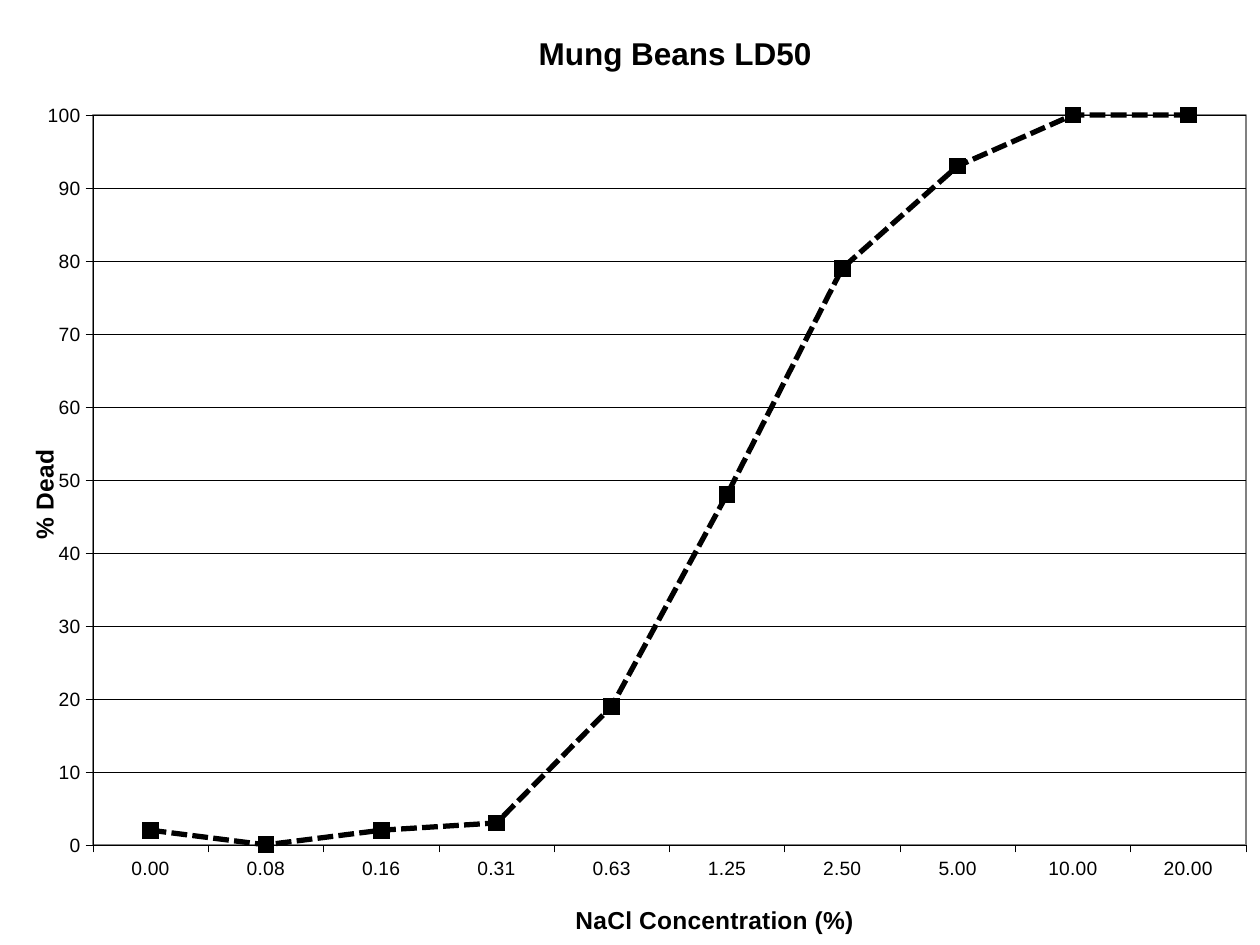
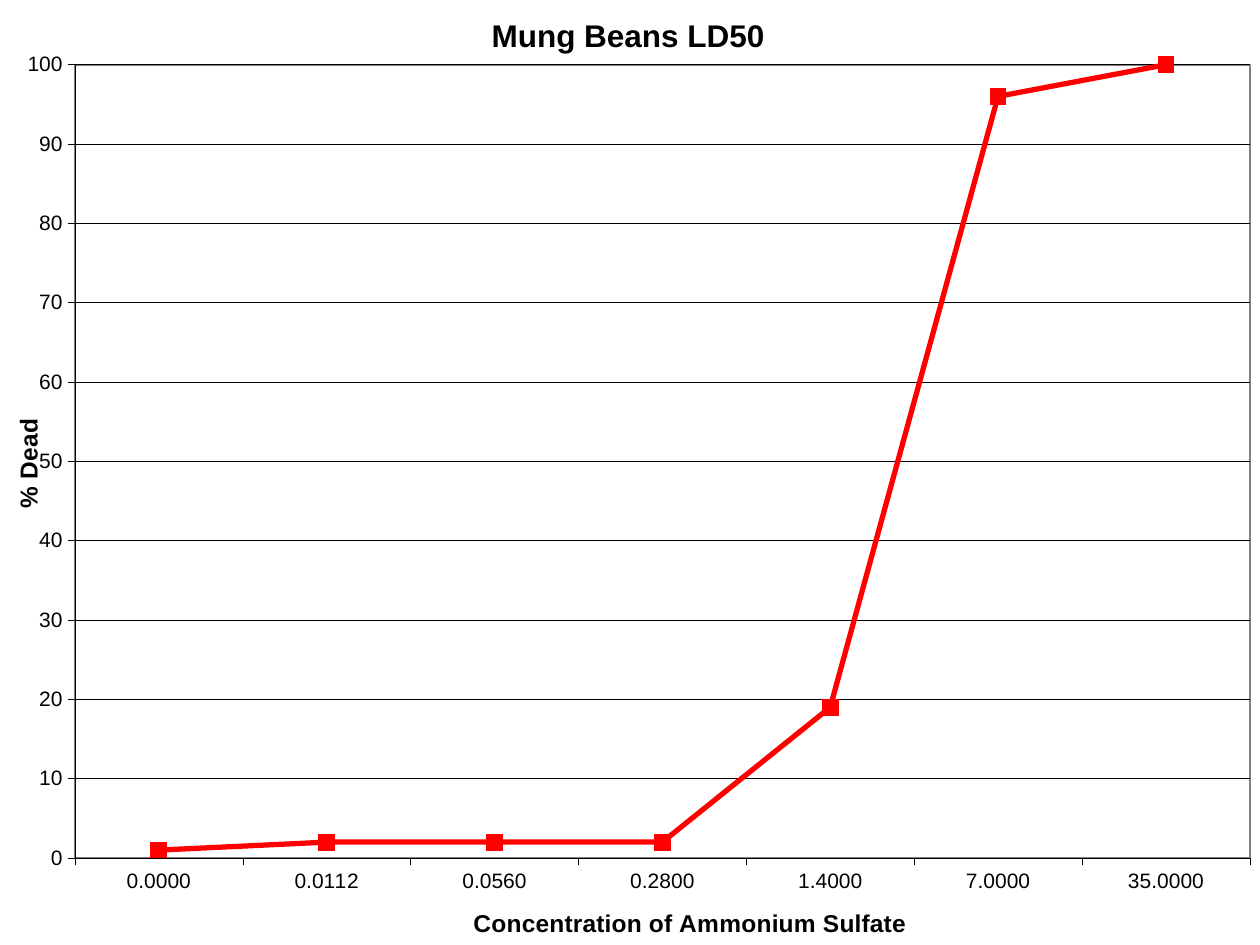
from lxml.etree import SubElement
from pptx import Presentation
from pptx.chart.data import CategoryChartData
from pptx.dml.color import RGBColor
from pptx.enum.chart import XL_CHART_TYPE as ChartType
from pptx.enum.chart import XL_MARKER_STYLE as MarkerStyle
from pptx.enum.chart import XL_TICK_MARK as TickMark
from pptx.enum.dml import MSO_LINE_DASH_STYLE as DashStyle
from pptx.oxml.ns import qn
from pptx.util import Pt

PX = 914400 // 126
WIDTH, HEIGHT = 1260, 945
FONT = "Arial"
COLORS = {"ink": "000000", "frame": "808080", "salt": "000000", "sulfate": "FF0000"}


def color(name):
    return RGBColor.from_string(COLORS[name])


def style_font(font, size, bold=False):
    font.name = FONT
    font.size = Pt(size)
    font.bold = bold
    font.color.rgb = color("ink")


def style_line(line, name, width):
    line.color.rgb = color(name)
    line.width = Pt(width)


def place(holder, index, spot, box):
    for old in holder.findall(qn("c:layout")):
        holder.remove(old)
    layout = holder.makeelement(qn("c:layout"), {})
    holder.insert(index, layout)
    manual = SubElement(layout, qn("c:manualLayout"))
    fields = []
    if len(spot) == 4:
        fields.append(("layoutTarget", "inner"))
    fields += [("xMode", "edge"), ("yMode", "edge")]
    sizes = (box[2], box[3]) * 2
    fields += [(key, f"{value / size:.4f}") for key, value, size in zip("xywh", spot, sizes)]
    for key, value in fields:
        SubElement(manual, qn(f"c:{key}"), val=value)


def add_title(title, text, size, spot, box):
    span = title.text_frame.paragraphs[0].add_run()
    span.text = text
    style_font(span.font, size, bold=True)
    place(title.element, 1, spot, box)


def style_axis(axis, size):
    axis.major_tick_mark = TickMark.OUTSIDE
    axis.minor_tick_mark = TickMark.NONE
    style_font(axis.tick_labels.font, size)
    style_line(axis.format.line, "ink", 0.25)


def style_series(series, name, dash):
    series.smooth = False
    style_line(series.format.line, name, 3)
    if dash:
        series.format.line.dash_style = dash
    marker = series.marker
    marker.style = MarkerStyle.SQUARE
    marker.size = 9
    marker.format.fill.solid()
    marker.format.fill.fore_color.rgb = color(name)
    style_line(marker.format.line, name, 0.75)


def frame_plot(chart, spot, box):
    area = chart.element.find(".//" + qn("c:plotArea"))
    place(area, 0, spot, box)
    shape = SubElement(area, qn("c:spPr"))
    SubElement(shape, qn("a:noFill"))
    line = SubElement(shape, qn("a:ln"), w=str(Pt(1)))
    fill = SubElement(line, qn("a:solidFill"))
    SubElement(fill, qn("a:srgbClr"), val=COLORS["frame"])


def add_dose_chart(page, box, doses, dead, dose_title, label_size, name, spots, dash=None):
    data = CategoryChartData()
    data.categories = doses
    data.add_series("Series 1", dead)
    chart = page.shapes.add_chart(
        ChartType.LINE_MARKERS, *(side * PX for side in box), data
    ).chart
    style_font(chart.font, 10)
    chart.has_legend = False
    chart.has_title = True
    chart.plots[0].vary_by_categories = False
    add_title(chart.chart_title, "Mung Beans LD50", 18, spots["title"], box)

    dose_axis, dead_axis = chart.category_axis, chart.value_axis
    style_axis(dose_axis, label_size)
    style_axis(dead_axis, label_size)
    add_title(dose_axis.axis_title, dose_title, 14, spots["dose"], box)
    add_title(dead_axis.axis_title, "% Dead", 14, spots["dead"], box)
    body = dead_axis.axis_title.element.find(".//" + qn("a:bodyPr"))
    body.set("rot", "-5400000")
    body.set("vert", "horz")

    dead_axis.minimum_scale = 0
    dead_axis.maximum_scale = 100
    dead_axis.major_unit = 10
    dead_axis.tick_labels.number_format = "0"
    dead_axis.tick_labels.number_format_is_linked = False
    dead_axis.has_major_gridlines = True
    style_line(dead_axis.major_gridlines.format.line, "ink", 0.25)
    style_series(chart.plots[0].series[0], name, dash)
    frame_plot(chart, spots["plot"], box)


def main():
    deck = Presentation()
    deck.slide_width, deck.slide_height = WIDTH * PX, HEIGHT * PX
    blank = deck.slide_layouts[6]
    box = (0, 0, WIDTH, HEIGHT)

    add_dose_chart(
        deck.slides.add_slide(blank), box,
        ["0.00", "0.08", "0.16", "0.31", "0.63", "1.25", "2.50", "5.00", "10.00", "20.00"],
        [2, 0, 2, 3, 19, 48, 79, 93, 100, 100],
        "NaCl Concentration (%)", 11, "salt",
        {"title": (533, 27), "dose": (571, 900), "dead": (24, 445),
         "plot": (93, 115, 1153, 730)},
        DashStyle.SQUARE_DOT,
    )
    add_dose_chart(
        deck.slides.add_slide(blank), box,
        ["0.0000", "0.0112", "0.0560", "0.2800", "1.4000", "7.0000", "35.0000"],
        [1, 2, 2, 2, 19, 96, 100],
        "Concentration of Ammonium Sulfate", 12, "sulfate",
        {"title": (486, 9), "dose": (469, 907), "dead": (8, 416),
         "plot": (75, 65, 1175, 797)},
    )
    deck.save("out.pptx")


if __name__ == "__main__":
    main()
